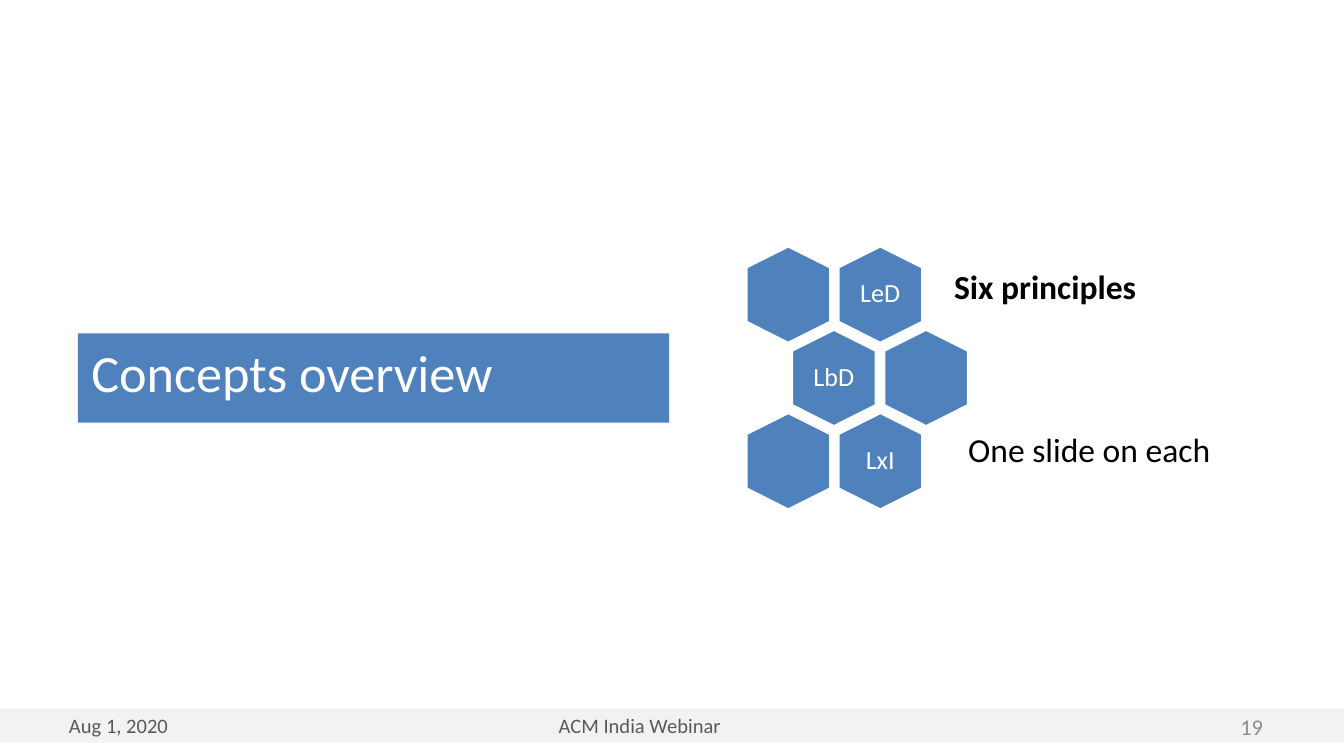
from pptx import Presentation
from pptx.dml.color import RGBColor
from pptx.enum.shapes import MSO_SHAPE
from pptx.enum.text import MSO_ANCHOR, PP_ALIGN
from pptx.util import Emu, Pt

PX = 4572
FONT = "Calibri"
BLUE = "4F81BD"
WHITE = "FFFFFF"
BLACK = "000000"
FOOTER_GRAY = "595959"
HEXAGON_LENGTH, HEXAGON_WIDTH = 146, 127
COLUMN_STEP, ROW_STEP = 137, 124
LABEL_WIDTH, LABEL_HEIGHT = 88, 100
HEXAGON_ROWS = [("", "LeD"), ("LbD", ""), ("", "LxI")]


def px(length):
    return Emu(length * PX)


def color(value):
    return RGBColor.from_string(value)


def box(left, top, width, height):
    return px(left), px(top), px(width), px(height)


def write(shape, text, size, text_color, align=PP_ALIGN.LEFT,
          anchor=MSO_ANCHOR.TOP, bold=False):
    frame = shape.text_frame
    frame.word_wrap = True
    frame.vertical_anchor = anchor
    paragraph = frame.paragraphs[0]
    paragraph.text = text
    paragraph.alignment = align
    paragraph.font.name = FONT
    paragraph.font.size = Pt(size)
    paragraph.font.bold = bold
    paragraph.font.color.rgb = color(text_color)
    return frame


def add_text(slide, bounds, text, size, text_color, **options):
    shape = slide.shapes.add_textbox(*box(*bounds))
    return write(shape, text, size, text_color, **options)


def add_filled_shape(slide, kind, bounds, fill):
    shape = slide.shapes.add_shape(kind, *box(*bounds))
    shape.shadow.inherit = False
    shape.fill.solid()
    shape.fill.fore_color.rgb = color(fill)
    shape.line.fill.background()
    return shape


def add_hexagon(slide, left, top, label):
    bounds = (left, top, HEXAGON_LENGTH, HEXAGON_WIDTH)
    hexagon = add_filled_shape(slide, MSO_SHAPE.HEXAGON, bounds, BLUE)
    hexagon.rotation = 90
    hexagon.adjustments[0] = 0.25
    hexagon.line.color.rgb = color(WHITE)
    hexagon.line.width = Pt(2)
    if label:
        label_bounds = (left + (HEXAGON_LENGTH - LABEL_WIDTH) // 2,
                        top + (HEXAGON_WIDTH - LABEL_HEIGHT) // 2,
                        LABEL_WIDTH, LABEL_HEIGHT)
        frame = add_text(slide, label_bounds, label, 14, WHITE,
                         align=PP_ALIGN.CENTER, anchor=MSO_ANCHOR.MIDDLE)
        frame.word_wrap = False
        frame.margin_left = frame.margin_right = px(12)
        frame.margin_top = frame.margin_bottom = px(12)
        frame.paragraphs[0].line_spacing = 0.9


def add_honeycomb(slide, left, top):
    for row, labels in enumerate(HEXAGON_ROWS):
        indent = row % 2 * COLUMN_STEP // 2
        for column, label in enumerate(labels):
            add_hexagon(slide, left + indent + column * COLUMN_STEP,
                        top + row * ROW_STEP, label)


def add_footer(slide):
    add_filled_shape(slide, MSO_SHAPE.RECTANGLE, (0, 1055, 2000, 50), "F2F2F2")
    add_text(slide, (483, 1052, 938, 48), "ACM India Webinar", 11, FOOTER_GRAY,
             align=PP_ALIGN.CENTER)
    add_text(slide, (83, 1052, 284, 48), "Aug 1, 2020", 11, FOOTER_GRAY)
    add_text(slide, (1775, 1052, 124, 60), "19", 12, "8C8C8C",
             align=PP_ALIGN.RIGHT, anchor=MSO_ANCHOR.MIDDLE)


def format_title(slide, bounds, text):
    title = slide.shapes.title
    title.left, title.top, title.width, title.height = box(*bounds)
    title.fill.solid()
    title.fill.fore_color.rgb = color(BLUE)
    write(title, text, 28, WHITE)


def main():
    presentation = Presentation()
    presentation.slide_width = px(2000)
    presentation.slide_height = px(1125)
    slide = presentation.slides.add_slide(presentation.slide_layouts[5])
    add_footer(slide)
    format_title(slide, (116, 496, 880, 133), "Concepts overview")
    add_honeycomb(slide, 1100, 375)
    add_text(slide, (1400, 386, 316, 80), "Six principles", 18, BLACK, bold=True)
    add_text(slide, (1421, 629, 416, 80), "One slide on each", 18, BLACK)
    presentation.save("out.pptx")


if __name__ == "__main__":
    main()
